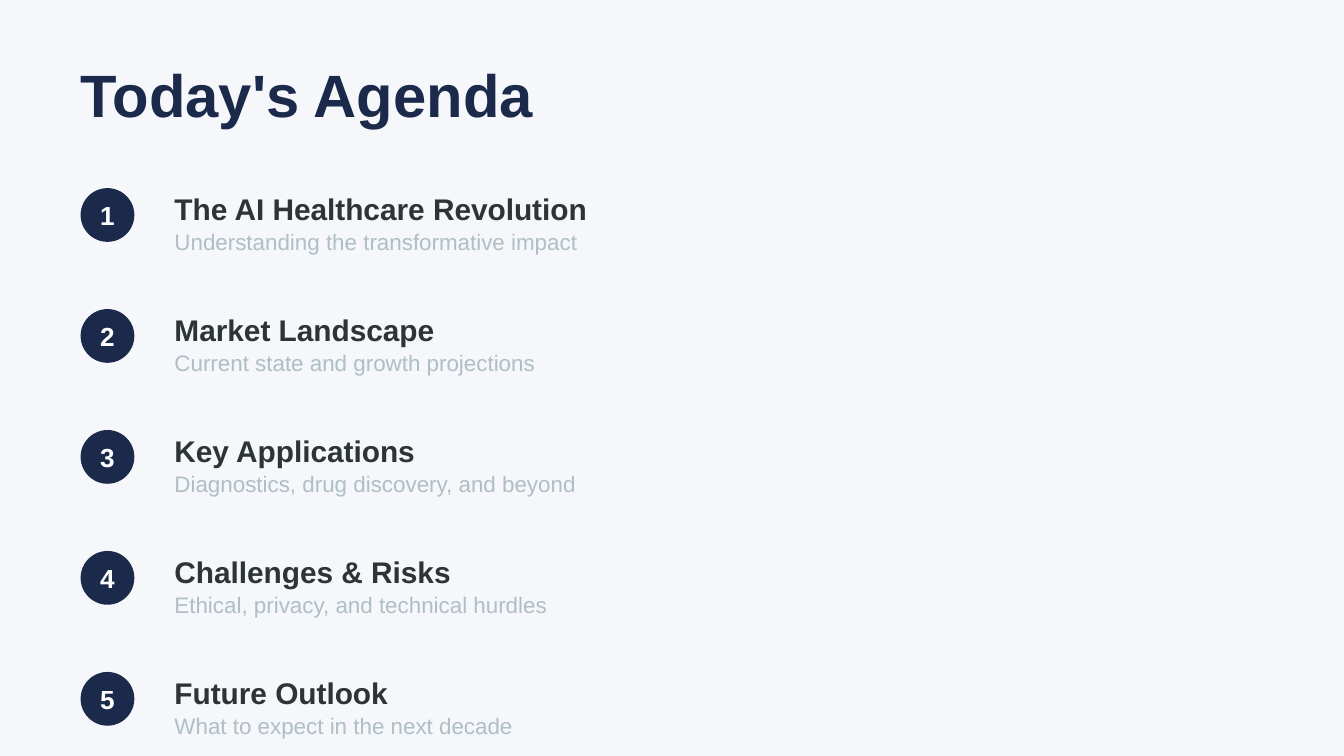
from dataclasses import dataclass

from pptx import Presentation
from pptx.dml.color import RGBColor
from pptx.enum.shapes import MSO_SHAPE
from pptx.enum.text import MSO_ANCHOR, MSO_AUTO_SIZE, PP_ALIGN
from pptx.util import Inches, Pt

OVAL = MSO_SHAPE.OVAL
MIDDLE = MSO_ANCHOR.MIDDLE
NO_AUTOFIT = MSO_AUTO_SIZE.NONE
LEFT, CENTER = PP_ALIGN.LEFT, PP_ALIGN.CENTER
TITLE_ONLY = 5


@dataclass(frozen=True)
class Theme:
    font: str = "Arial"
    background: str = "F5F7FA"
    navy: str = "1B2A4A"
    white: str = "FFFFFF"
    heading: str = "2D3436"
    muted: str = "B0BEC5"
    title_size: int = 32
    heading_size: int = 16
    number_size: int = 14
    detail_size: int = 12


THEME = Theme()

AGENDA = [
    ("The AI Healthcare Revolution", "Understanding the transformative impact"),
    ("Market Landscape", "Current state and growth projections"),
    ("Key Applications", "Diagnostics, drug discovery, and beyond"),
    ("Challenges & Risks", "Ethical, privacy, and technical hurdles"),
    ("Future Outlook", "What to expect in the next decade"),
]
FIRST_TOP, ROW_PITCH = 1.4, 0.9
BADGE_LEFT, BADGE_SIZE = 0.6, 0.4
TEXT_LEFT, TEXT_WIDTH, TEXT_HEIGHT = 1.2, 4, 0.3
NUMBER_OFFSET = (BADGE_SIZE - TEXT_HEIGHT) / 2
DETAIL_OFFSET = 0.25


def write_text(sp, text, *, size, color, bold=False, align=LEFT):
    """Fill a shape with one vertically centred, formatted paragraph."""
    tf = sp.text_frame
    tf.word_wrap = True
    tf.auto_size = NO_AUTOFIT
    tf.vertical_anchor = MIDDLE
    p = tf.paragraphs[0]
    p.alignment = align
    r = p.add_run()
    r.text = text
    r.font.name = THEME.font
    r.font.size = Pt(size)
    r.font.bold = bold
    r.font.color.rgb = RGBColor.from_string(color)


def set_background(slide):
    fill = slide.background.fill
    fill.solid()
    fill.fore_color.rgb = RGBColor.from_string(THEME.background)


def add_title(slide, text):
    sp = slide.shapes.title
    sp.left, sp.top = Inches(0.5), Inches(0.4)
    sp.width, sp.height = Inches(9), Inches(0.6)
    write_text(sp, text, size=THEME.title_size, color=THEME.navy, bold=True)


def add_label(slide, text, left, top, width, **text_format):
    sp = slide.shapes.add_textbox(Inches(left), Inches(top),
                                  Inches(width), Inches(TEXT_HEIGHT))
    write_text(sp, text, **text_format)


def add_badge(slide, number, top):
    sp = slide.shapes.add_shape(OVAL, Inches(BADGE_LEFT), Inches(top),
                                Inches(BADGE_SIZE), Inches(BADGE_SIZE))
    sp.shadow.inherit = False
    sp.fill.solid()
    sp.fill.fore_color.rgb = RGBColor.from_string(THEME.navy)
    sp.line.fill.background()
    add_label(slide, str(number), BADGE_LEFT, top + NUMBER_OFFSET, BADGE_SIZE,
              size=THEME.number_size, color=THEME.white, bold=True,
              align=CENTER)


def add_agenda_item(slide, number, heading, detail, top):
    add_badge(slide, number, top)
    add_label(slide, heading, TEXT_LEFT, top, TEXT_WIDTH,
              size=THEME.heading_size, color=THEME.heading, bold=True)
    add_label(slide, detail, TEXT_LEFT, top + DETAIL_OFFSET, TEXT_WIDTH,
              size=THEME.detail_size, color=THEME.muted)


def main():
    prs = Presentation()
    prs.slide_width = Inches(10)
    prs.slide_height = prs.slide_width * 9 // 16
    slide = prs.slides.add_slide(prs.slide_layouts[TITLE_ONLY])
    set_background(slide)
    add_title(slide, "Today's Agenda")
    for i, (heading, detail) in enumerate(AGENDA):
        add_agenda_item(slide, i + 1, heading, detail,
                        FIRST_TOP + i * ROW_PITCH)
    prs.save("out.pptx")


if __name__ == "__main__":
    main()
